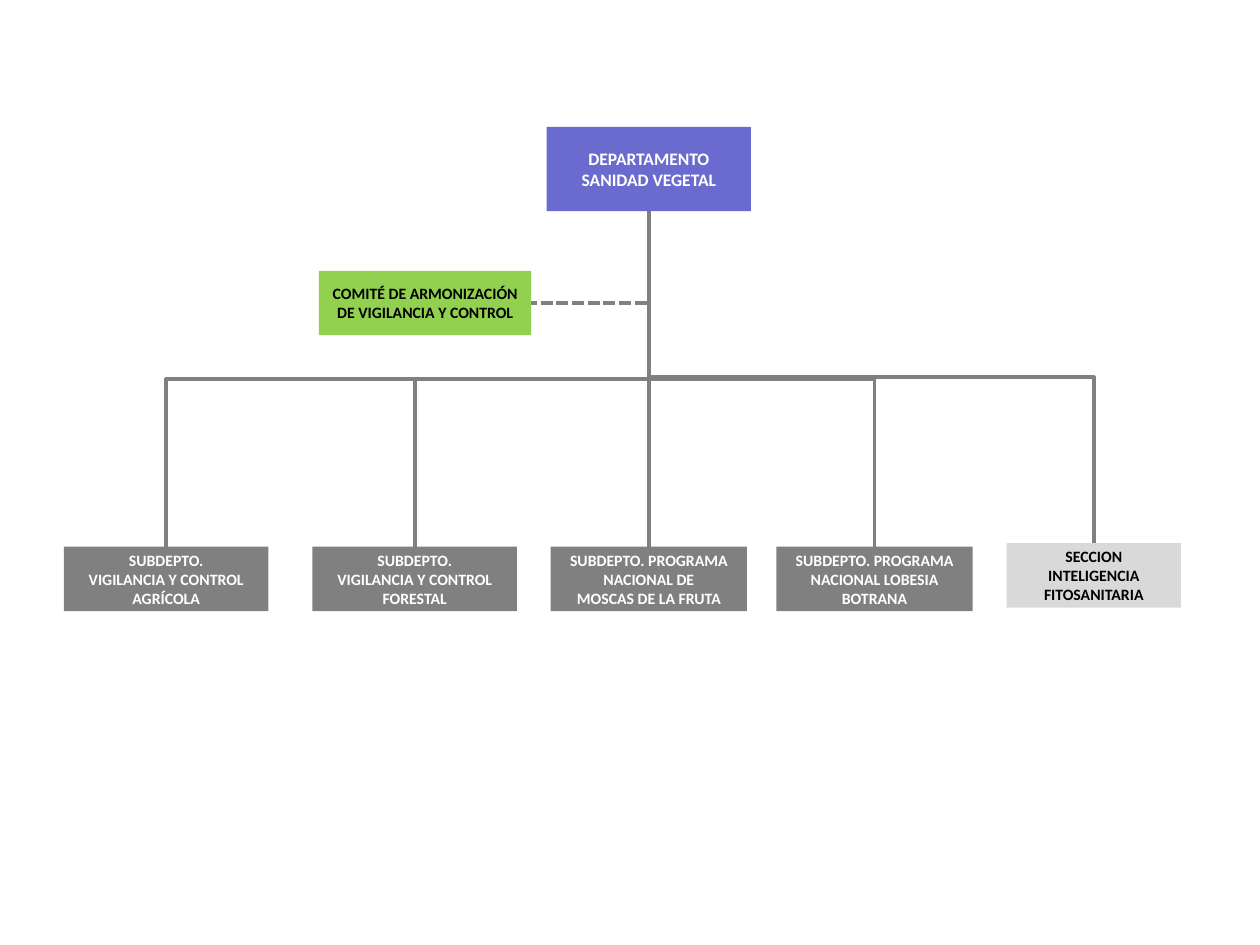
from pptx import Presentation
from pptx.dml.color import RGBColor
from pptx.enum.dml import MSO_LINE
from pptx.enum.shapes import MSO_CONNECTOR, MSO_SHAPE
from pptx.enum.text import MSO_ANCHOR, PP_ALIGN
from pptx.oxml.ns import qn
from pptx.util import Cm, Pt
from lxml import etree

ELBOW = MSO_CONNECTOR.ELBOW
RECT = MSO_SHAPE.RECTANGLE
DASH = MSO_LINE.SQUARE_DOT
MIDDLE = MSO_ANCHOR.MIDDLE
CENTER = PP_ALIGN.CENTER

THEME = {
    "font": "Calibri",
    "head": Pt(10),
    "body": Pt(9),
    "line": Pt(2.25),
    "blue": RGBColor(0x6B, 0x6B, 0xCF),
    "green": RGBColor(0x92, 0xD0, 0x50),
    "gray": RGBColor(0x80, 0x80, 0x80),
    "pale": RGBColor(0xD9, 0xD9, 0xD9),
    "white": RGBColor(0xFF, 0xFF, 0xFF),
    "black": RGBColor(0, 0, 0),
}

deck = Presentation()
deck.slide_width, deck.slide_height = Cm(25.4), Cm(19.05)
slide = deck.slides.add_slide(deck.slide_layouts[6])
shapes = slide.shapes


def add_box(mid, top, width, height, fill, ink, size, lines):
    box = shapes.add_shape(RECT, Cm(mid - width / 2), Cm(top), Cm(width), Cm(height))
    box.shadow.inherit = False
    box.fill.solid()
    box.fill.fore_color.rgb = THEME[fill]
    box.line.fill.background()
    frame = box.text_frame
    frame.word_wrap = True
    frame.vertical_anchor = MIDDLE
    for i, line in enumerate(lines):
        para = frame.add_paragraph() if i else frame.paragraphs[0]
        para.alignment = CENTER
        run = para.add_run()
        run.text = line
        font = run.font
        font.name, font.size, font.bold = THEME["font"], THEME[size], True
        font.color.rgb = THEME[ink]


def add_link(x1, y1, x2, y2):
    mid_x, mid_y = (x1 + x2) / 2, (y1 + y2) / 2
    half_w, half_h = (y2 - y1) / 2, abs(x2 - x1) / 2
    side = -1 if x2 > x1 else 1
    link = shapes.add_connector(
        ELBOW,
        Cm(mid_x - side * half_w), Cm(mid_y - half_h),
        Cm(mid_x + side * half_w), Cm(mid_y + half_h),
    )
    link.line.color.rgb = THEME["gray"]
    link.line.width = THEME["line"]
    props = link.element.spPr
    etree.SubElement(props, qn("a:effectLst"))
    props.find(qn("a:xfrm")).set("rot", str((180 - side * 90) * 60000))
    return link


root_x, root_top, root_h = 13.08, 2.56, 1.7
root_end = root_top + root_h
team_h = 1.3
staff_x, staff_top, staff_w = 8.57, 5.46, 4.28

teams = [
    (3.35, 11.02, 4.12, "gray", "white",
     ["SUBDEPTO.", "VIGILANCIA Y CONTROL AGRÍCOLA"]),
    (8.36, 11.02, 4.12, "gray", "white",
     ["SUBDEPTO.", "VIGILANCIA Y CONTROL FORESTAL"]),
    (root_x, 11.02, 3.96, "gray", "white",
     ["SUBDEPTO. PROGRAMA NACIONAL DE", "MOSCAS DE LA FRUTA"]),
    (17.63, 11.02, 3.96, "gray", "white",
     ["SUBDEPTO. PROGRAMA NACIONAL LOBESIA BOTRANA"]),
    (22.05, 10.95, 3.51, "pale", "black",
     ["SECCION INTELIGENCIA FITOSANITARIA"]),
]

staff = add_link(root_x, root_end, staff_x + staff_w / 2, staff_top + team_h / 2)
staff.line.dash_style = DASH
staff.element.spPr.find(qn("a:prstGeom")).set("prst", "bentConnector2")

for mid, top, width, fill, ink, lines in teams:
    add_link(root_x, root_end, mid, top)
    add_box(mid, top, width, team_h, fill, ink, "body", lines)

add_box(root_x, root_top, 4.12, root_h, "blue", "white", "head",
        ["DEPARTAMENTO", "SANIDAD VEGETAL"])
add_box(staff_x, staff_top, staff_w, team_h, "green", "black", "body",
        ["COMITÉ DE ARMONIZACIÓN DE VIGILANCIA Y CONTROL"])

deck.save("out.pptx")
